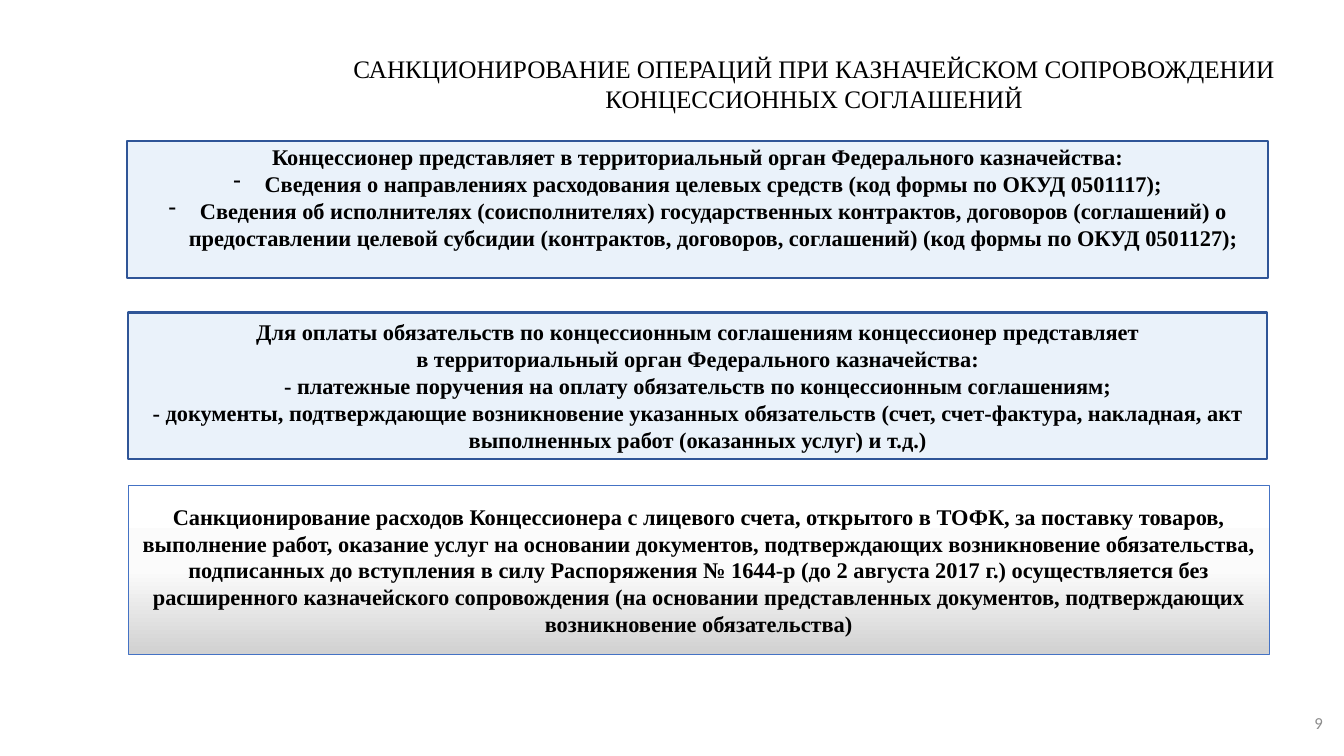
import copy
from dataclasses import dataclass

import pptx
import pptx.dml.color
import pptx.enum.shapes
import pptx.enum.text
import pptx.oxml
import pptx.oxml.ns
import pptx.util
from pptx.enum.text import MSO_ANCHOR, PP_ALIGN
from pptx.util import Inches, Pt

SERIF = "Times New Roman"
BULLET = "- "
BULLET_INDENT = Inches(0.31)


@dataclass
class TextStyle:
    size: int
    font: str = SERIF
    color: str = "000000"
    bold: bool = False
    alignment: PP_ALIGN = PP_ALIGN.CENTER
    anchor: MSO_ANCHOR = MSO_ANCHOR.MIDDLE
    top_inset: float = 0.05


@dataclass
class Panel:
    bounds: tuple[float, float, float, float]
    lines: list[str]
    style: TextStyle
    fill: list[tuple[float, str]]
    line_color: str
    line_width: float
    bulleted: bool = False


def rgb(value: str) -> pptx.dml.color.RGBColor:
    return pptx.dml.color.RGBColor.from_string(value)


def add_hanging_bullet(paragraph) -> None:
    properties = paragraph._p.get_or_add_pPr()
    properties.set("marL", str(BULLET_INDENT))
    properties.set("indent", str(-BULLET_INDENT))
    for tag, name, value in (("a:buFontTx", None, None), ("a:buChar", "char", "-")):
        element = pptx.oxml.parse_xml(f"<{tag} {pptx.oxml.ns.nsdecls('a')}/>")
        if name:
            element.set(name, value)
        properties.append(element)


def write_text(shape, lines: list[str], style: TextStyle, bulleted: bool = False) -> None:
    frame = shape.text_frame
    frame_format = {
        "word_wrap": True,
        "vertical_anchor": style.anchor,
        "margin_top": Inches(style.top_inset),
    }
    for name, value in frame_format.items():
        setattr(frame, name, value)
    font_format = {"name": style.font, "size": Pt(style.size), "bold": style.bold}
    for index, line in enumerate(lines):
        paragraph = frame.paragraphs[0] if index == 0 else frame.add_paragraph()
        paragraph.alignment = style.alignment
        if bulleted and line.startswith(BULLET):
            add_hanging_bullet(paragraph)
            line = line.removeprefix(BULLET)
        run = paragraph.add_run()
        run.text = line
        for name, value in font_format.items():
            setattr(run.font, name, value)
        run.font.color.rgb = rgb(style.color)


def paint(fill, stops: list[tuple[float, str]]) -> None:
    if len(stops) == 1:
        fill.solid()
        fill.fore_color.rgb = rgb(stops[0][1])
        return
    fill.gradient()
    fill.gradient_angle = 270  # counter-clockwise, so top to bottom
    stop_list = fill.gradient_stops[0]._gs.getparent()
    while len(stop_list) < len(stops):
        stop_list.append(copy.deepcopy(stop_list[0]))
    for stop, (position, color) in zip(fill.gradient_stops, stops):
        stop.position = position
        stop.color.rgb = rgb(color)


def add_panel(slide, panel: Panel) -> None:
    shape = slide.shapes.add_shape(
        pptx.enum.shapes.MSO_SHAPE.RECTANGLE, *map(Inches, panel.bounds)
    )
    shape.shadow.inherit = False
    paint(shape.fill, panel.fill)
    shape.line.color.rgb = rgb(panel.line_color)
    shape.line.width = Pt(panel.line_width)
    write_text(shape, panel.lines, panel.style, panel.bulleted)


def add_label(slide, bounds: tuple[float, float, float, float],
              lines: list[str], style: TextStyle) -> None:
    write_text(slide.shapes.add_textbox(*map(Inches, bounds)), lines, style)


BODY = TextStyle(16, bold=True)
BODY_TOP = TextStyle(16, bold=True, anchor=MSO_ANCHOR.TOP, top_inset=0.02)
PALE_BLUE = [(0, "EAF2FA")]
WHITE_TO_GREY = [(0, "FFFFFF"), (0.5, "FBFBFB"), (1, "D1D1D1")]

PANELS = [
    Panel(
        (1.26, 1.4, 11.32, 1.36),
        [
            "Концессионер представляет в территориальный орган Федерального казначейства:",
            "- Сведения о направлениях расходования целевых средств "
            "(код формы по ОКУД 0501117);",
            "- Сведения об исполнителях (соисполнителях) государственных контрактов, "
            "договоров (соглашений) о предоставлении целевой субсидии (контрактов, "
            "договоров, соглашений) (код формы по ОКУД 0501127);",
        ],
        BODY_TOP, PALE_BLUE, "2F5597", 1.5, bulleted=True,
    ),
    Panel(
        (1.27, 3.1, 11.3, 1.45),
        [
            "Для оплаты обязательств по концессионным соглашениям концессионер представляет",
            "в территориальный орган Федерального казначейства:",
            "- платежные поручения на оплату обязательств по концессионным соглашениям;",
            "- документы, подтверждающие возникновение указанных обязательств (счет, "
            "счет-фактура, накладная, акт выполненных работ (оказанных услуг) и т.д.)",
        ],
        BODY, PALE_BLUE, "2F5597", 1.5,
    ),
    Panel(
        (1.27, 4.82, 11.32, 1.67),
        [
            "Санкционирование расходов Концессионера с лицевого счета, открытого в ТОФК, "
            "за поставку товаров, выполнение работ, оказание услуг на основании документов, "
            "подтверждающих возникновение обязательства, подписанных до вступления в силу "
            "Распоряжения № 1644-р (до 2 августа 2017 г.) осуществляется без расширенного "
            "казначейского сопровождения (на основании представленных документов, "
            "подтверждающих возникновение обязательства)",
        ],
        BODY, WHITE_TO_GREY, "4472C4", 0.5,
    ),
]


def main() -> None:
    presentation = pptx.Presentation()
    presentation.slide_width = Inches(13.33)
    presentation.slide_height = Inches(7.5)
    slide = presentation.slides.add_slide(presentation.slide_layouts[6])

    # Title
    add_label(
        slide, (3.39, 0.48, 9.37, 0.71),
        ["САНКЦИОНИРОВАНИЕ ОПЕРАЦИЙ ПРИ КАЗНАЧЕЙСКОМ СОПРОВОЖДЕНИИ",
         "КОНЦЕССИОННЫХ СОГЛАШЕНИЙ"],
        TextStyle(18, anchor=MSO_ANCHOR.TOP),
    )

    # Panels
    for panel in PANELS:
        add_panel(slide, panel)

    # Page number
    add_label(
        slide, (10.22, 6.97, 3, 0.4), ["9"],
        TextStyle(12, font="Calibri", color="8C8C8C", alignment=PP_ALIGN.RIGHT),
    )

    presentation.save("out.pptx")


if __name__ == "__main__":
    main()
